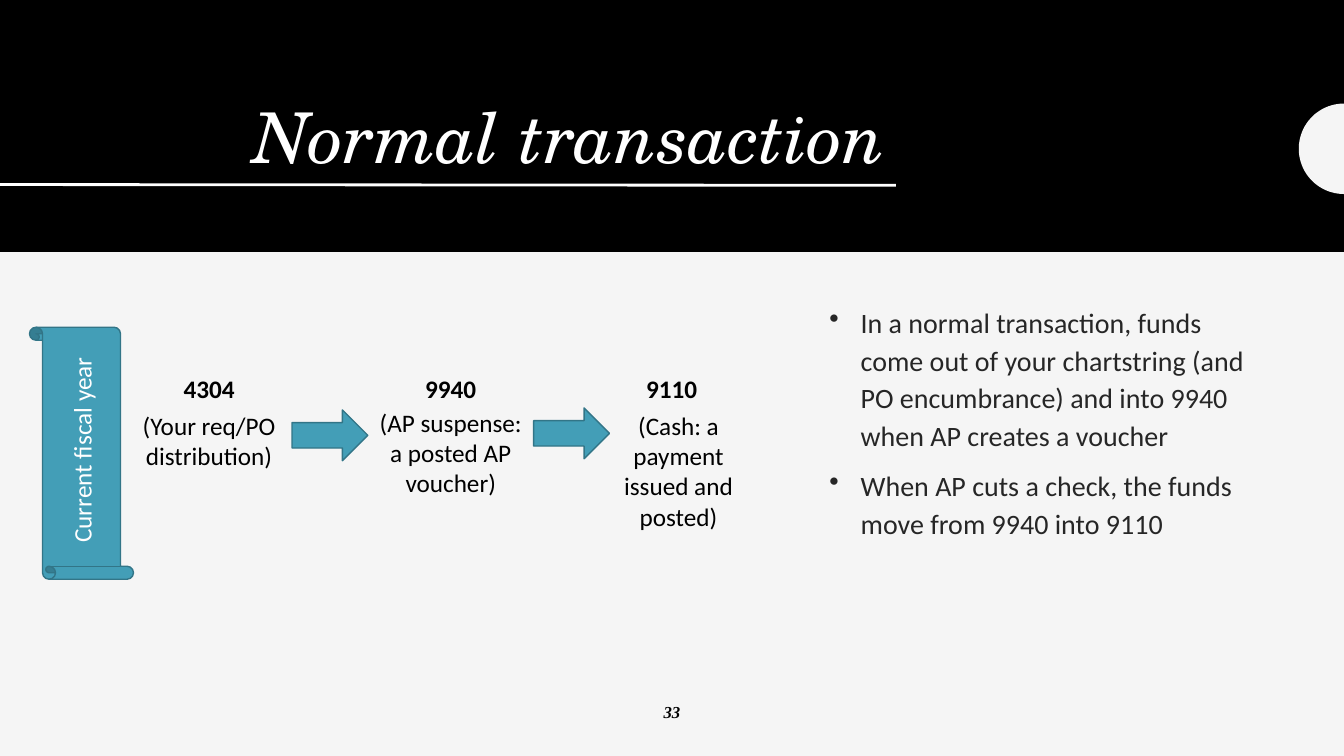
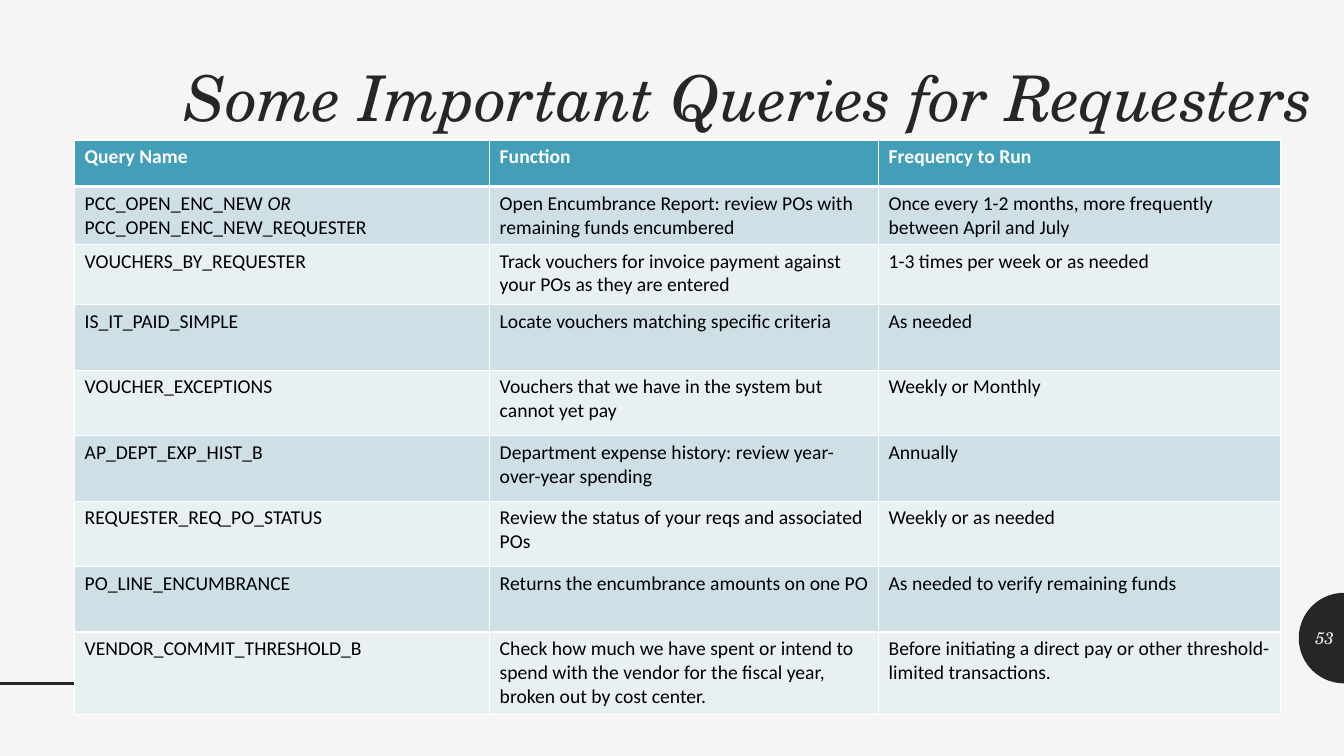
import math

from lxml import etree
from pptx import Presentation
from pptx.dml.color import RGBColor
from pptx.enum.shapes import MSO_CONNECTOR, MSO_SHAPE
from pptx.enum.text import MSO_ANCHOR, MSO_AUTO_SIZE, PP_ALIGN
from pptx.oxml.ns import qn
from pptx.util import Cm, Pt

LEFT, CENTER, RIGHT = PP_ALIGN.LEFT, PP_ALIGN.CENTER, PP_ALIGN.RIGHT
TOP, MIDDLE, BOTTOM = MSO_ANCHOR.TOP, MSO_ANCHOR.MIDDLE, MSO_ANCHOR.BOTTOM
RECT, ARROW, SCROLL = MSO_SHAPE.RECTANGLE, MSO_SHAPE.RIGHT_ARROW, MSO_SHAPE.HORIZONTAL_SCROLL

# ---- content ----
FLOW_TITLE = "Normal transaction"
FISCAL_YEAR = "Current fiscal year"
STEPS = [  # code, its shift, description, its top, box width
    ("4304", 0, "(Your req/PO distribution)", 10.21, 4.18),
    ("9940", 0, "(AP suspense: a posted AP voucher)", 10.13, 4.18),
    ("9110", -0.17, "(Cash: a payment issued and posted)", 10.21, 3.48),
]
ARROW_TOPS = [10.33, 10.28]
NOTES = [
    "In a normal transaction, funds come out of your chartstring (and PO encumbrance) "
    "and into 9940 when AP creates a voucher",
    "When AP cuts a check, the funds move from 9940 into 9110",
]

QUERY_TITLE = "Some Important Queries for Requesters"
QUERIES = [
    ("Query Name", "Function", "Frequency to Run"),
    ([[("PCC_OPEN_ENC_NEW ", {}), ("OR", {"italic": True})], "PCC_OPEN_ENC_NEW_REQUESTER"],
     "Open Encumbrance Report: review POs with remaining funds encumbered",
     "Once every 1-2 months, more frequently between April and July"),
    ("VOUCHERS_BY_REQUESTER",
     "Track vouchers for invoice payment against your POs as they are entered",
     "1-3 times per week or as needed"),
    ("IS_IT_PAID_SIMPLE", "Locate vouchers matching specific criteria", "As needed"),
    ("VOUCHER_EXCEPTIONS", "Vouchers that we have in the system but cannot yet pay",
     "Weekly or Monthly"),
    ("AP_DEPT_EXP_HIST_B", "Department expense history: review year-over-year spending",
     "Annually"),
    ("REQUESTER_REQ_PO_STATUS", "Review the status of your reqs and associated POs",
     "Weekly or as needed"),
    ("PO_LINE_ENCUMBRANCE", "Returns the encumbrance amounts on one PO",
     "As needed to verify remaining funds"),
    ("VENDOR_COMMIT_THRESHOLD_B",
     "Check how much we have spent or intend to spend with the vendor for the fiscal year, "
     "broken out by cost center.",
     "Before initiating a direct pay or other threshold-limited transactions."),
]
COL_WIDTHS = [10.46, 9.8, 10.13]
ROW_HEIGHTS = [1.17, 1.4, 1.52] + [1.65] * 5 + [2.08]

# ---- shared look ----
COLORS = {
    "paper": "F5F5F5", "ink": "262626", "black": "000000", "white": "FFFFFF",
    "teal": "439EB7", "teal_edge": "327587", "row_dark": "CFDFE6", "row_light": "E9F0F3",
}
SERIF, SANS = "TeX Gyre Schola", "Calibri"
FONTS = {
    "title": {"name": SERIF, "size": Pt(50), "italic": True},
    "long_title": {"name": SERIF, "size": Pt(45), "italic": True},
    "badge": {"name": SERIF, "size": Pt(12), "italic": True},
    "footer": {"name": "Times New Roman", "size": Pt(12), "bold": True, "italic": True},
    "body": {"name": SANS, "size": Pt(20)},
    "label": {"name": SANS, "size": Pt(18)},
    "code": {"name": SANS, "size": Pt(18), "bold": True},
    "cell": {"name": SANS, "size": Pt(14), "bold": False},
    "header": {"name": SANS, "size": Pt(14), "bold": True},
}
SLIDE_W, SLIDE_H = 33.87, 19.05
DISC_R = 1.14
STEP_LEFT, STEP_W, ARROW_W = 3.18, 4.18, 1.91


def rgb(color):
    return RGBColor.from_string(COLORS[color])


def box(left, top, width, height):
    return Cm(left), Cm(top), Cm(width), Cm(height)


def write(tf, paragraphs, font, color, **para):
    """Fill a text frame; a paragraph is a string or a list of (text, font changes)."""
    if isinstance(paragraphs, str):
        paragraphs = [paragraphs]
    for i, runs in enumerate(paragraphs):
        p = tf.paragraphs[0] if i == 0 else tf.add_paragraph()
        for name, value in para.items():
            setattr(p, name, value)
        for text, changes in [(runs, {})] if isinstance(runs, str) else runs:
            r = p.add_run()
            r.text = text
            for name, value in {**FONTS[font], **changes}.items():
                setattr(r.font, name, value)
            r.font.color.rgb = rgb(color)


def add_text(slide, place, paragraphs, font, color, anchor=TOP, **para):
    tf = slide.shapes.add_textbox(*box(*place)).text_frame
    tf.word_wrap = True
    tf.vertical_anchor = anchor
    write(tf, paragraphs, font, color, **para)
    return tf


def paint(sp, fill, edge=None):
    sp.shadow.inherit = False
    sp.fill.solid()
    sp.fill.fore_color.rgb = rgb(fill)
    if edge:
        sp.line.color.rgb = rgb(edge)
        sp.line.width = Pt(1)
    else:
        sp.line.fill.background()


def add_shape(slide, kind, place, fill, edge=None):
    sp = slide.shapes.add_shape(kind, *box(*place))
    paint(sp, fill, edge)
    return sp


def add_rule(slide, start, end, color):
    line = slide.shapes.add_connector(
        MSO_CONNECTOR.STRAIGHT, *(Cm(v) for v in start + end))
    line.line.color.rgb = rgb(color)
    line.line.width = Pt(2)
    etree.SubElement(line._element.spPr, qn("a:effectLst"))


def add_half_disc(slide, middle, color):
    """Half circle whose flat side lies on the right slide edge."""
    angles = [math.radians(a) for a in range(90, 271, 4)] + [math.radians(270)]
    points = [(Cm(SLIDE_W + DISC_R * math.cos(a)), Cm(middle + DISC_R * math.sin(a)))
              for a in angles]
    builder = slide.shapes.build_freeform(*points[0])
    builder.add_line_segments(points[1:], close=True)
    paint(builder.convert_to_shape(), color)


def set_title(slide, place, text, font, color):
    title = slide.shapes.title
    title.left, title.top, title.width, title.height = box(*place)
    tf = title.text_frame
    tf.auto_size = MSO_AUTO_SIZE.NONE
    tf.word_wrap = True
    tf.vertical_anchor = BOTTOM
    write(tf, text, font, color, alignment=RIGHT, line_spacing=0.9)


def add_bullets(tf):
    for p in tf.paragraphs:
        pPr = p._p.get_or_add_pPr()
        pPr.set("marL", str(Cm(0.79)))
        pPr.set("indent", str(-Cm(0.79)))
        etree.SubElement(pPr, qn("a:buChar"), char="•")


def set_borders(cell, widths):
    """Draw white borders, widths in points for left, right, top, bottom."""
    tcPr = cell._tc.get_or_add_tcPr()
    for i, (side, width) in enumerate(zip("LRTB", widths)):
        ln = etree.Element(qn(f"a:ln{side}"), w=str(Pt(width)))
        fill = etree.SubElement(ln, qn("a:solidFill"))
        etree.SubElement(fill, qn("a:srgbClr"), val=COLORS["white"])
        tcPr.insert(i, ln)


def build_flow(slide):
    add_shape(slide, RECT, (0, 0, SLIDE_W, 6.35), "black")
    title = slide.shapes.title._element
    title.getparent().append(title)  # bring the title in front of the band
    set_title(slide, (2.67, 1.19, 19.91, 3.43), FLOW_TITLE, "title", "white")
    add_rule(slide, (0, 4.65), (22.58, 4.67), "white")
    add_half_disc(slide, 3.75, "paper")

    notes = add_text(slide, (20.65, 7.47, 11.1, 9.83), NOTES, "body", "ink",
                     alignment=LEFT, line_spacing=1.12, space_before=Pt(9))
    add_bullets(notes)

    for i, (code, shift, text, top, width) in enumerate(STEPS):
        left = STEP_LEFT + i * (STEP_W + ARROW_W)
        add_text(slide, (left + shift, 9.29, width, 1.02), code, "code", "black",
                 alignment=CENTER)
        add_text(slide, (left, top, width, 2.5), text, "label", "black", alignment=CENTER)
        if i < len(ARROW_TOPS):
            add_shape(slide, ARROW, (left + STEP_W, ARROW_TOPS[i], ARROW_W, 1.28),
                      "teal", "teal_edge")

    scroll = add_shape(slide, SCROLL, (-1.12, 10.11, 6.35, 2.62), "teal", "teal_edge")
    scroll.rotation = 270
    scroll.text_frame.vertical_anchor = MIDDLE
    write(scroll.text_frame, FISCAL_YEAR, "label", "white", alignment=CENTER)
    add_text(slide, (0, 17.55, SLIDE_W, 1.02), "33", "footer", "black", alignment=CENTER)


def build_queries(slide):
    add_half_disc(slide, 16.08, "ink")
    add_rule(slide, (0, 17.22), (12.5, 17.22), "ink")
    set_title(slide, (2.11, 1.55, 31.22, 1.98), QUERY_TITLE, "long_title", "ink")

    place = box(1.88, 3.53, sum(COL_WIDTHS), sum(ROW_HEIGHTS))
    table = slide.shapes.add_table(len(QUERIES), len(COL_WIDTHS), *place).table
    for col, width in zip(table.columns, COL_WIDTHS):
        col.width = Cm(width)
    for r, (row, height) in enumerate(zip(QUERIES, ROW_HEIGHTS)):
        table.rows[r].height = Cm(height)
        header = r == 0
        fill = "teal" if header else "row_dark" if r % 2 else "row_light"
        font, color = ("header", "white") if header else ("cell", "black")
        for c, content in enumerate(row):
            cell = table.cell(r, c)
            cell.fill.solid()
            cell.fill.fore_color.rgb = rgb(fill)
            set_borders(cell, (1, 1, 3 if r == 1 else 1, 3 if header else 1))
            write(cell.text_frame, content, font, color)

    add_text(slide, (SLIDE_W - DISC_R, 15.57, DISC_R, 1.02), "53", "badge", "paper",
             anchor=MIDDLE, alignment=RIGHT)


def main():
    prs = Presentation()
    prs.slide_width, prs.slide_height = Cm(SLIDE_W), Cm(SLIDE_H)
    background = prs.slide_master.background.fill
    background.solid()
    background.fore_color.rgb = rgb("paper")
    title_only = prs.slide_layouts[5]
    for build in (build_flow, build_queries):
        build(prs.slides.add_slide(title_only))
    prs.save("out.pptx")


if __name__ == "__main__":
    main()
